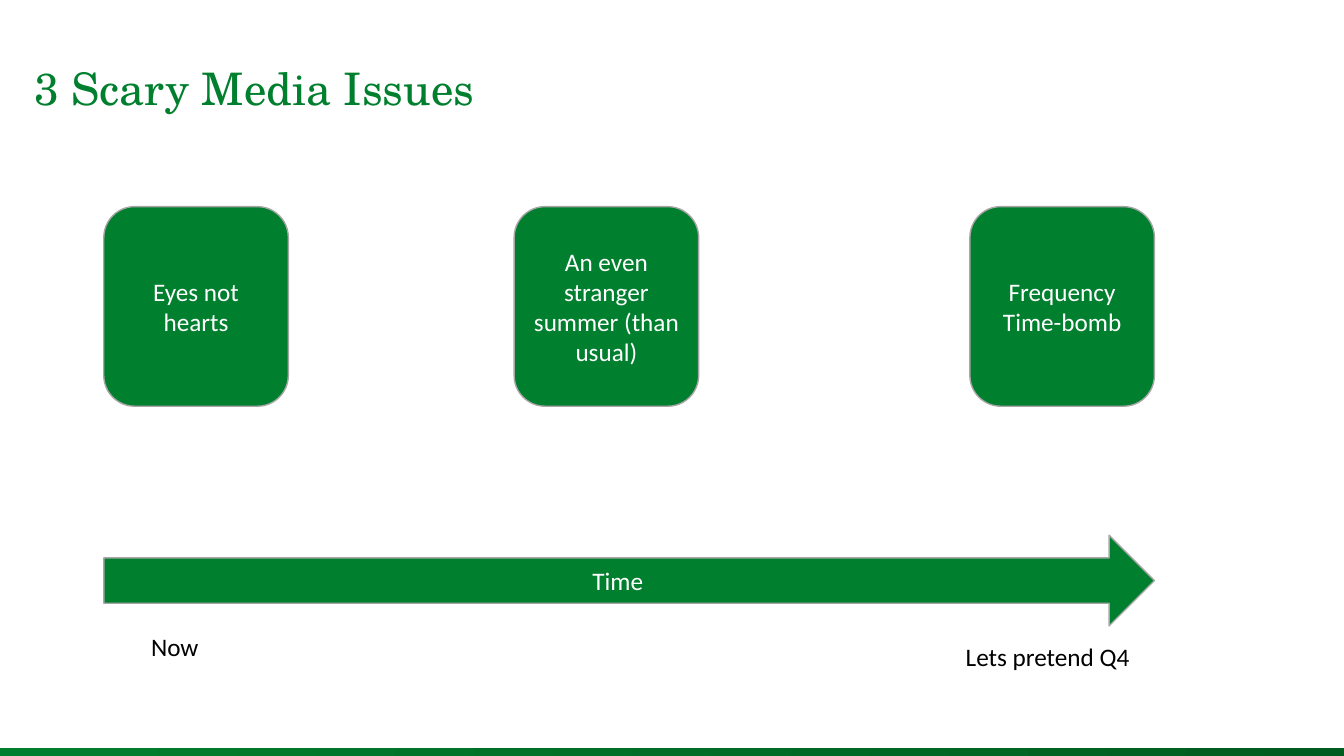
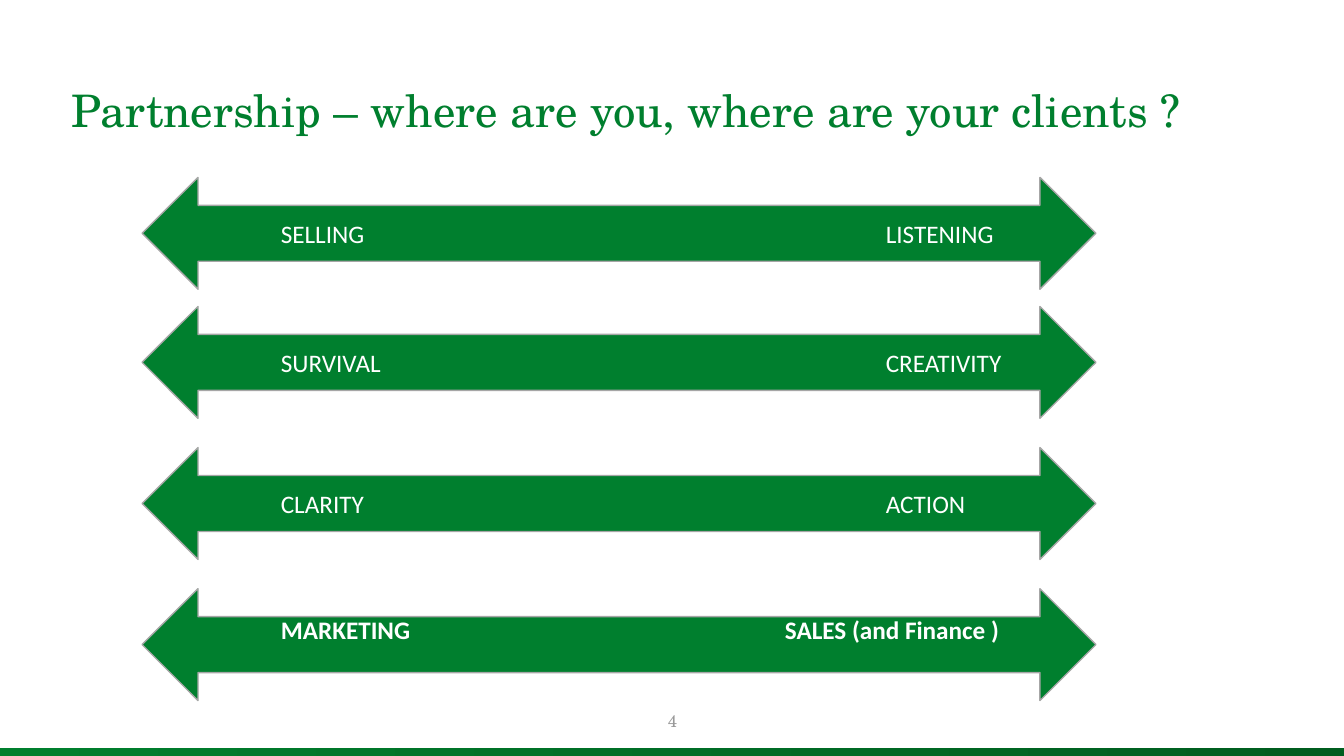
from lxml import etree
from pptx import Presentation
from pptx.dml.color import RGBColor
from pptx.enum.shapes import MSO_SHAPE as Preset
from pptx.enum.text import MSO_ANCHOR as Anchor, MSO_AUTO_SIZE as AutoSize, PP_ALIGN as Align
from pptx.oxml.ns import qn
from pptx.util import Pt

PX = 9144  # EMU in one px, 100 px to the inch
WIDTH, HEIGHT = 1333, 750
COLOURS = {
    "green": "007F2E",
    "dark green": "005D1F",
    "outline": "A6A6A6",
    "number": "999999",
    "white": "FFFFFF",
    "black": "000000",
}
TITLE_FONT, BODY_FONT = "TeX Gyre Schola", "Calibri"


def colour(name):
    return RGBColor.from_string(COLOURS[name])


def emu(*lengths):
    return [length * PX for length in lengths]


def write(shape, text, size=18, font=BODY_FONT, color="white", bold=False,
          align=Align.LEFT, anchor=Anchor.MIDDLE, wrap=True, fit=AutoSize.NONE,
          line_spacing=None, tabs=()):
    """Put one formatted paragraph into a shape; tabs are px from the text edge."""
    frame = shape.text_frame
    frame.auto_size, frame.word_wrap, frame.vertical_anchor = fit, wrap, anchor
    paragraph = frame.paragraphs[0]
    paragraph.alignment = align
    paragraph.line_spacing = line_spacing
    if tabs:
        tab_list = etree.SubElement(paragraph._p.get_or_add_pPr(), qn("a:tabLst"))
        for position in emu(*tabs):
            etree.SubElement(tab_list, qn("a:tab"), pos=str(position), algn="l")
    run = paragraph.add_run()
    run.text = text
    run.font.name, run.font.size, run.font.bold = font, Pt(size), bold
    run.font.color.rgb = colour(color)


def add_preset(slide, preset, box):
    """Add a green shape with a thin grey outline."""
    shape = slide.shapes.add_shape(preset, *emu(*box))
    shape.shadow.inherit = False
    shape.fill.solid()
    shape.fill.fore_color.rgb = colour("green")
    shape.line.color.rgb = colour("outline")
    shape.line.width = Pt(1)
    return shape


def add_label(slide, text, box, **text_format):
    write(slide.shapes.add_textbox(*emu(*box)), text, **text_format)


def add_titled_slide(presentation, title, left, top):
    slide = presentation.slides.add_slide(presentation.slide_layouts[5])
    shape = slide.shapes.title
    shape.left, shape.top, shape.width, shape.height = emu(left, top, 1212, 145)
    write(shape, title, size=32, font=TITLE_FONT, color="green", line_spacing=0.9)
    return slide


def move_band_to_master(presentation, slide):
    """Draw the bottom band once and hand it to the slide master."""
    band = slide.shapes.add_shape(Preset.RECTANGLE, *emu(0, 742, WIDTH, 10))
    band.shadow.inherit = False
    band.line.fill.background()
    band.fill.gradient()
    band.fill.gradient_angle = 0
    for stop, position, name in zip(band.fill.gradient_stops, (0, 1), ("green", "dark green")):
        stop.position = position
        stop.color.rgb = colour(name)
    presentation.slide_master.shapes.element.append(band.element)


def build_issues(presentation):
    slide = add_titled_slide(presentation, "3 Scary Media Issues", 24, 18)
    move_band_to_master(presentation, slide)

    # Issues
    issues = [
        (103, "Eyes not hearts"),
        (510, "An even stranger summer (than usual)"),
        (962, "Frequency Time-bomb"),
    ]
    for left, text in issues:
        card = add_preset(slide, Preset.ROUNDED_RECTANGLE, (left, 205, 183, 198))
        write(card, text, align=Align.CENTER)

    # Time line
    arrow = add_preset(slide, Preset.RIGHT_ARROW, (103, 531, 1042, 90))
    write(arrow, "Time", align=Align.CENTER)
    for text, box in [("Now", (140, 621, 74, 40)), ("Lets pretend Q4", (948, 631, 196, 40))]:
        add_label(slide, text, box, color="black", anchor=Anchor.TOP, wrap=False,
                  fit=AutoSize.SHAPE_TO_FIT_TEXT)


def build_partnership(presentation):
    slide = add_titled_slide(
        presentation, "Partnership – where are you, where are your clients ?", 61, 40)
    add_label(slide, "4", (517, 695, 300, 40), size=12, font=TITLE_FONT,
              color="number", align=Align.CENTER)

    # Scales: top, left word, right word, right tab, bold, lift of the text
    scales = [
        (176, "SELLING", "LISTENING", 700, False, 0),
        (304, "SURVIVAL", "CREATIVITY", 700, False, 0),
        (444, "CLARITY", "ACTION", 700, False, 0),
        (584, "MARKETING", "SALES (and Finance )", 600, True, 15),
    ]
    for top, left_word, right_word, right_tab, bold, lift in scales:
        arrow = add_preset(slide, Preset.LEFT_RIGHT_ARROW, (141, top, 946, 111))
        write(arrow, f"\t{left_word}\t{right_word}", bold=bold, tabs=(100, right_tab))
        arrow.text_frame.margin_bottom = (5 + 2 * lift) * PX


def main():
    presentation = Presentation()
    presentation.slide_width, presentation.slide_height = emu(WIDTH, HEIGHT)
    build_issues(presentation)
    build_partnership(presentation)
    presentation.save("out.pptx")


if __name__ == "__main__":
    main()
